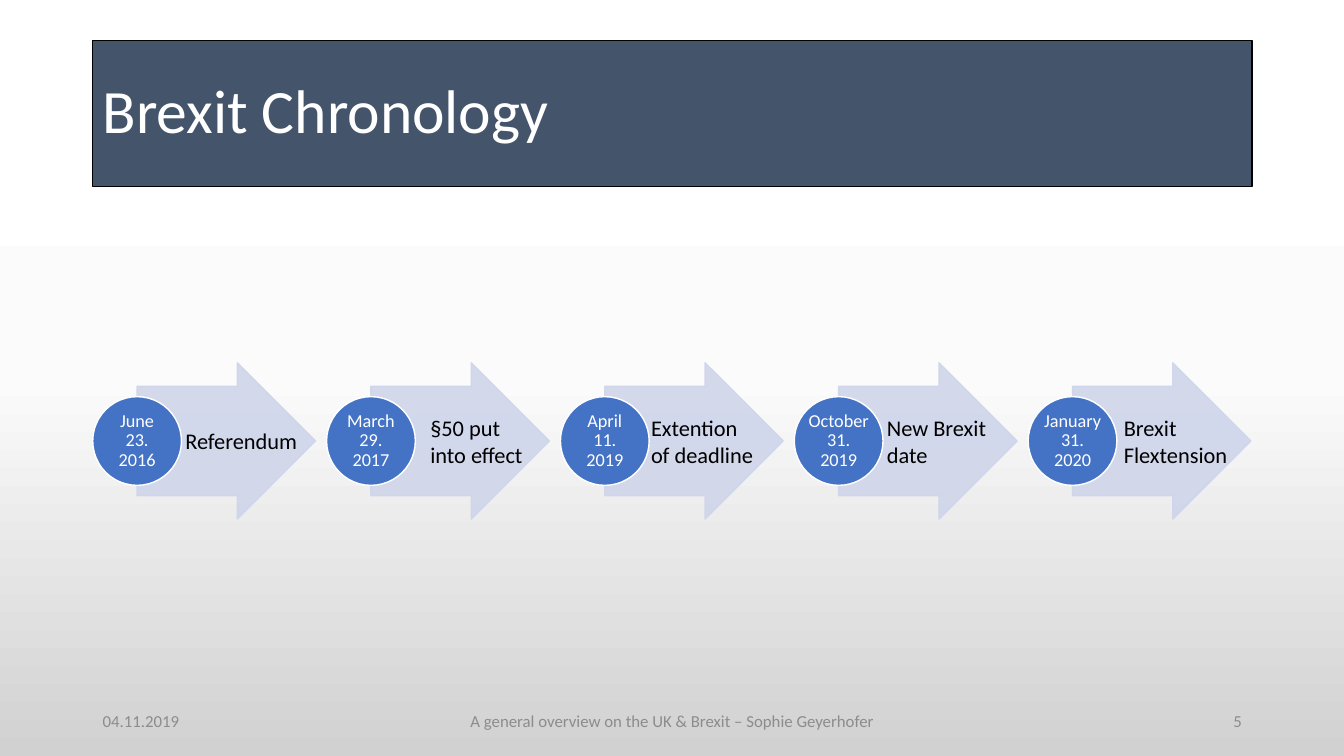
from dataclasses import dataclass

from lxml.etree import SubElement
from pptx import Presentation
from pptx.dml.color import RGBColor
from pptx.enum.shapes import MSO_SHAPE
from pptx.enum.text import MSO_ANCHOR, PP_ALIGN
from pptx.oxml.ns import qn
from pptx.util import Inches, Pt


@dataclass(frozen=True)
class Theme:
    font: str = "Calibri"
    banner: str = "44546A"
    arrow: str = "CFD5EA"
    badge: str = "4472C4"
    light: str = "FFFFFF"
    dark: str = "000000"
    muted: str = "8C8C8C"
    backdrop: tuple = ((15, "FFFFFF"), (50, "FBFBFB"), (100, "D1D1D1"))
    title_size: int = 44
    label_size: int = 16
    date_size: int = 13
    footer_size: int = 12


THEME = Theme()
WIDTH, HEIGHT = Inches(13.33), Inches(7.5)

# Horizontal and vertical shares of the slide, in percent
MARGIN, CONTENT = 6.9, 86.27
STEP = 17.4
AXIS = 58.33
ARROW = (13.28, 20.67)
BADGE = (6.6, 11.73)
LABEL_HEIGHT = 8.53
FOOTER_TOP, FOOTER_HEIGHT = 92.67, 5.33

# Date lines, label lines, label offset from the badge, label width
EVENTS = [
    (["June", "23. 2016"], ["Referendum"], 6.15, 11.48),
    (["March 29. 2017"], ["§50 put into effect"], 6.98, 9.53),
    (["April", "11. 2019"], ["Extention", "of deadline"], 6, 11.48),
    (["October", "31. 2019"], ["New Brexit date"], 6.15, 9.75),
    (["January", "31. 2020"], ["Brexit Flextension"], 6.38, 9.53),
]

FOOTERS = [
    ("04.11.2019", MARGIN, 22.5, PP_ALIGN.LEFT),
    ("A general overview on the UK & Brexit – Sophie Geyerhofer",
     33.15, 33.75, PP_ALIGN.CENTER),
    ("5", 70.65, 22.5, PP_ALIGN.RIGHT),
]


def place(left, top, width, height):
    """Turn percentages of the slide into lengths."""
    return (int(WIDTH * left / 100), int(HEIGHT * top / 100),
            int(WIDTH * width / 100), int(HEIGHT * height / 100))


def centred(left, width, height):
    """Place an area so that its middle lies on the timeline axis."""
    return place(left, AXIS - height / 2, width, height)


def write(box, lines, size, color, align=PP_ALIGN.LEFT, spacing=1.0, inset=None):
    frame = box.text_frame
    frame.word_wrap = True
    frame.vertical_anchor = MSO_ANCHOR.MIDDLE
    if inset is not None:
        frame.margin_left = frame.margin_right = inset
        frame.margin_top = frame.margin_bottom = inset
    para = frame.paragraphs[0]
    para.alignment = align
    para.line_spacing = spacing
    for number, line in enumerate(lines):
        if number:
            para.add_line_break()
        span = para.add_run()
        span.text = line
        span.font.name = THEME.font
        span.font.size = Pt(size)
        span.font.color.rgb = RGBColor.from_string(color)


def add_text(page, area, lines, size, color, align=PP_ALIGN.LEFT):
    write(page.shapes.add_textbox(*area), lines, size, color, align)


def add_block(page, kind, area, fill, outline):
    block = page.shapes.add_shape(kind, *area)
    block.shadow.inherit = False
    block.fill.solid()
    block.fill.fore_color.rgb = RGBColor.from_string(fill)
    block.line.color.rgb = RGBColor.from_string(outline)
    block.line.width = Pt(1)
    return block


def set_opacity(block, percent):
    """Apply the opacity to both fill and outline."""
    for color in block.element.spPr.iter(qn("a:srgbClr")):
        SubElement(color, qn("a:alpha"), val=str(percent * 1000))


def paint_background(page):
    fill = page.background.fill
    fill.gradient()
    fill.gradient_angle = 270
    stops = next(page.element.iter(qn("a:gsLst")))
    for stop in list(stops):
        stops.remove(stop)
    for position, color in THEME.backdrop:
        stop = SubElement(stops, qn("a:gs"), pos=str(position * 1000))
        SubElement(stop, qn("a:srgbClr"), val=color)


def add_title(page, title):
    banner = add_block(page, MSO_SHAPE.RECTANGLE,
                       place(MARGIN, 5.33, CONTENT, 19.33),
                       THEME.banner, THEME.dark)
    write(banner, [title], THEME.title_size, THEME.light, spacing=0.9)


def add_event(page, left, date, label, offset, label_width):
    # Arrow starts at the middle of the badge
    arrow = add_block(page, MSO_SHAPE.RIGHT_ARROW,
                      centred(left + BADGE[0] / 2, *ARROW),
                      THEME.arrow, THEME.arrow)
    arrow.adjustments[0], arrow.adjustments[1] = 0.7, 0.5
    set_opacity(arrow, 90)
    # Date badge
    badge = add_block(page, MSO_SHAPE.OVAL, centred(left, *BADGE),
                      THEME.badge, THEME.light)
    write(badge, date, THEME.date_size, THEME.light,
          PP_ALIGN.CENTER, 0.9, Inches(0.01))
    # Event label
    add_text(page, centred(left + offset, label_width, LABEL_HEIGHT),
             label, THEME.label_size, THEME.dark)


def main():
    deck = Presentation()
    deck.slide_width, deck.slide_height = WIDTH, HEIGHT
    page = deck.slides.add_slide(deck.slide_layouts[6])
    paint_background(page)
    add_title(page, "Brexit Chronology")

    # Timeline
    for column, event in enumerate(EVENTS):
        add_event(page, MARGIN + column * STEP, *event)

    # Footer
    for text, left, width, align in FOOTERS:
        add_text(page, place(left, FOOTER_TOP, width, FOOTER_HEIGHT),
                 [text], THEME.footer_size, THEME.muted, align)

    deck.save("out.pptx")


if __name__ == "__main__":
    main()
